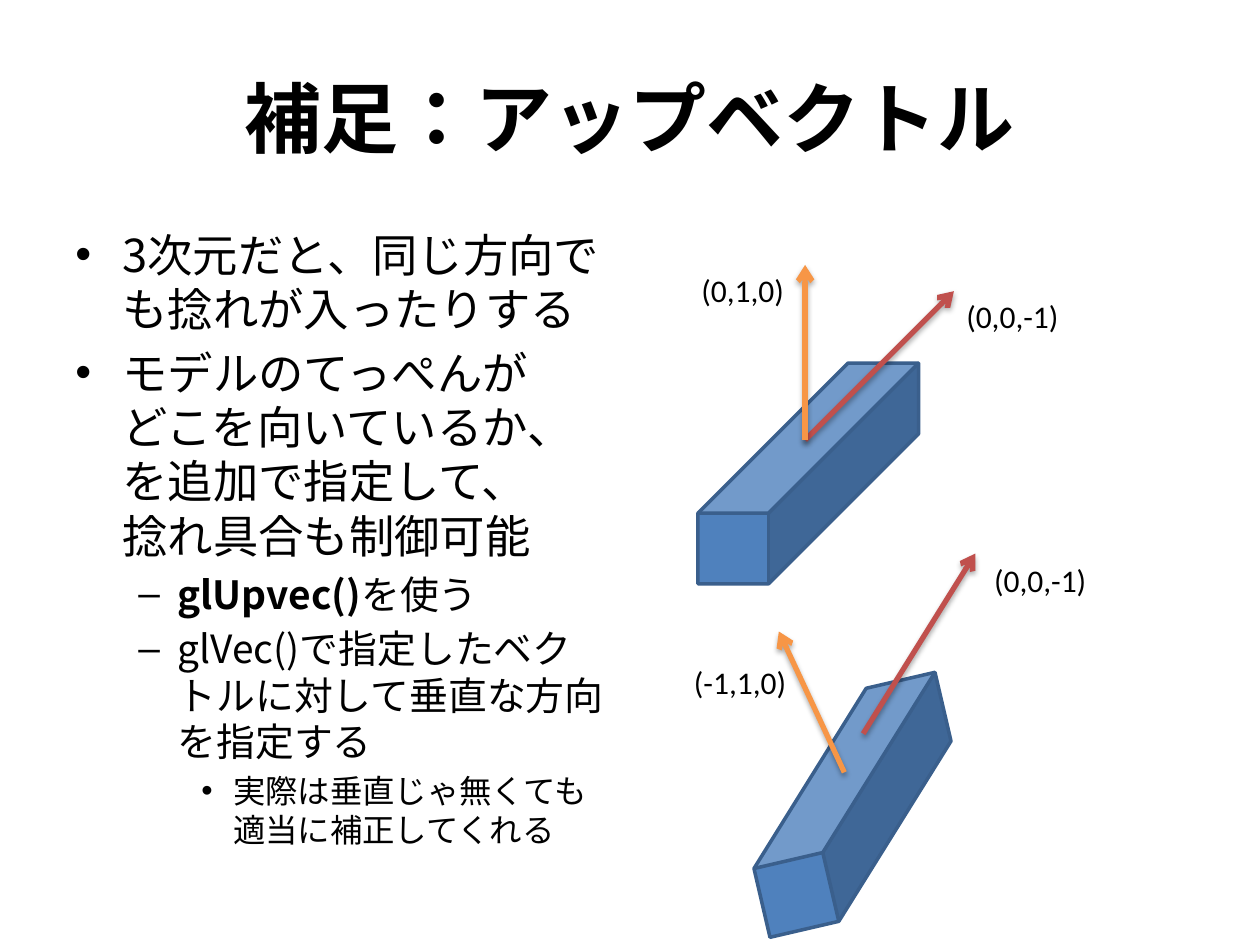
import pptx
import pptx.dml.color
import pptx.enum.lang
import pptx.enum.shapes
import pptx.enum.text
import pptx.oxml
import pptx.oxml.ns
import pptx.util
from pptx.util import Cm

BLACK = pptx.dml.color.RGBColor(0x00, 0x00, 0x00)
BLUE = pptx.dml.color.RGBColor(0x4F, 0x81, 0xBD)
DARK_BLUE = pptx.dml.color.RGBColor(0x3A, 0x5F, 0x8C)
RED = pptx.dml.color.RGBColor(0xC0, 0x50, 0x4D)
ORANGE = pptx.dml.color.RGBColor(0xF7, 0x96, 0x46)

JAPANESE_FONT = "Noto Sans CJK JP"
LABEL_FONT = "Calibri"
NAMESPACE = pptx.oxml.ns.nsdecls("a")

LEVELS = [
    {"size": 25.9, "margin": 0.95, "hanging": 0.95, "bullet": "•"},
    {"size": 22.2, "margin": 2.06, "hanging": 0.79, "bullet": "–"},
    {"size": 18.5, "margin": 3.18, "hanging": 0.64, "bullet": "•"},
]

BODY = [
    (0, "3次元だと、同じ方向でも捻れが入ったりする", ""),
    (0, "モデルのてっぺんが\vどこを向いているか、を追加で指定して、\v捻れ具合も制御可能", ""),
    (1, "glUpvec()", "を使う"),
    (1, "glVec()で指定したベクトルに対して垂直な方向を指定する", ""),
    (2, "実際は垂直じゃ無くても適当に補正してくれる", ""),
]

MODELS = [
    {
        "box": (14.07, 7.32, 4.45, 4.45),
        "rotation": 0,
        "vectors": [
            (RED, (2.16, 1.55), (5.16, -1.45), "(0,0,-1)", (5.16, -1.45)),
            (ORANGE, (2.16, 1.55), (2.16, -1.98), "(0,1,0)", (-0.18, -1.98)),
        ],
    },
    {
        "box": (14.96, 14, 4.45, 4.45),
        "rotation": 346.9,
        "vectors": [
            (RED, (2.44, 0.79), (4.7, -2.84), "(0,0,-1)", (4.83, -2.82)),
            (ORANGE, (2.06, 1.57), (0.74, -1.27), "(-1,1,0)", (-1.22, -0.76)),
        ],
    },
]


def append_xml(parent, markup):
    """Append a DrawingML element to a parent element."""
    parent.append(pptx.oxml.parse_xml(markup))


def style_paragraph(paragraph, name, size, bold=None):
    """Set the Latin and East Asian font, size and colour of a paragraph."""
    font = paragraph.font
    font.name = name
    font.size = pptx.util.Pt(size)
    font.bold = bold
    font.color.rgb = BLACK
    font.language_id = pptx.enum.lang.MSO_LANGUAGE_ID.JAPANESE
    properties = paragraph._p.pPr.find(pptx.oxml.ns.qn("a:defRPr"))
    append_xml(properties, f'<a:ea {NAMESPACE} typeface="{name}"/>')


def add_text_frame(slide, box):
    """Add a wrapping text box and return its text frame."""
    shape = slide.shapes.add_textbox(*(Cm(length) for length in box))
    shape.text_frame.word_wrap = True
    return shape.text_frame


def place_title(slide, box, text):
    """Place and format the title placeholder."""
    title = slide.shapes.title
    title.left, title.top, title.width, title.height = (Cm(length) for length in box)
    title.text_frame.vertical_anchor = pptx.enum.text.MSO_ANCHOR.MIDDLE
    title.text_frame.text = text
    paragraph = title.text_frame.paragraphs[0]
    paragraph.alignment = pptx.enum.text.PP_ALIGN.CENTER
    style_paragraph(paragraph, JAPANESE_FONT, 44, True)


def add_body(slide, box, items):
    """Add the bulleted explanation."""
    text_frame = add_text_frame(slide, box)
    for index, (level, lead, rest) in enumerate(items):
        paragraph = text_frame.add_paragraph() if index else text_frame.paragraphs[0]
        style = LEVELS[level]
        paragraph.text = lead
        if rest:
            paragraph.runs[0].font.bold = True
            paragraph.add_run().text = rest
        paragraph.level = level
        properties = paragraph._p.get_or_add_pPr()
        properties.set("marL", str(Cm(style["margin"])))
        properties.set("indent", str(-Cm(style["hanging"])))
        append_xml(
            properties,
            f'<a:spcBef {NAMESPACE}><a:spcPct val="20000"/></a:spcBef>',
        )
        append_xml(properties, f'<a:buFont {NAMESPACE} typeface="Arial"/>')
        append_xml(properties, f'<a:buChar {NAMESPACE} char="{style["bullet"]}"/>')
        style_paragraph(paragraph, JAPANESE_FONT, style["size"])


def add_arrow(slide, start, end, color):
    """Add a vector arrow with a soft shadow below it."""
    arrow = slide.shapes.add_connector(
        pptx.enum.shapes.MSO_CONNECTOR.STRAIGHT,
        *(Cm(length) for length in (*start, *end)),
    )
    arrow.line.color.rgb = color
    arrow.line.width = pptx.util.Pt(3)
    append_xml(arrow.line._get_or_add_ln(), f'<a:tailEnd {NAMESPACE} type="arrow"/>')
    append_xml(
        arrow._element.spPr,
        f'<a:effectLst {NAMESPACE}>'
        '<a:outerShdw blurRad="40000" dist="23000" dir="5400000" rotWithShape="0">'
        '<a:srgbClr val="000000"><a:alpha val="35000"/></a:srgbClr>'
        '</a:outerShdw></a:effectLst>',
    )


def add_model(slide, box, rotation, vectors):
    """Add a cuboid model with its labelled direction vectors."""
    left, top = box[:2]
    cube = slide.shapes.add_shape(
        pptx.enum.shapes.MSO_SHAPE.CUBE, *(Cm(length) for length in box)
    )
    cube.adjustments[0] = 0.68
    cube.rotation = rotation
    cube.shadow.inherit = False
    cube.fill.solid()
    cube.fill.fore_color.rgb = BLUE
    cube.line.color.rgb = DARK_BLUE
    cube.line.width = pptx.util.Pt(2)
    for color, start, end, text, offset in vectors:
        start, end, corner = (
            (left + x, top + y) for x, y in (start, end, offset)
        )
        add_arrow(slide, start, end, color)
        text_frame = add_text_frame(slide, (*corner, 3.2, 1.02))
        text_frame.text = text
        style_paragraph(text_frame.paragraphs[0], LABEL_FONT, 18)


def main():
    """Build and save the up vector slide."""
    presentation = pptx.Presentation()
    presentation.slide_width = Cm(25.4)
    presentation.slide_height = Cm(19.05)
    slide = presentation.slides.add_slide(
        presentation.slide_layouts.get_by_name("Title Only")
    )
    place_title(slide, (1.27, 0.76, 22.86, 3.18), "補足：アップベクトル")
    add_body(slide, (1.27, 4.45, 11.23, 12.57), BODY)
    for model in MODELS:
        add_model(slide, **model)
    presentation.save("out.pptx")


if __name__ == "__main__":
    main()
